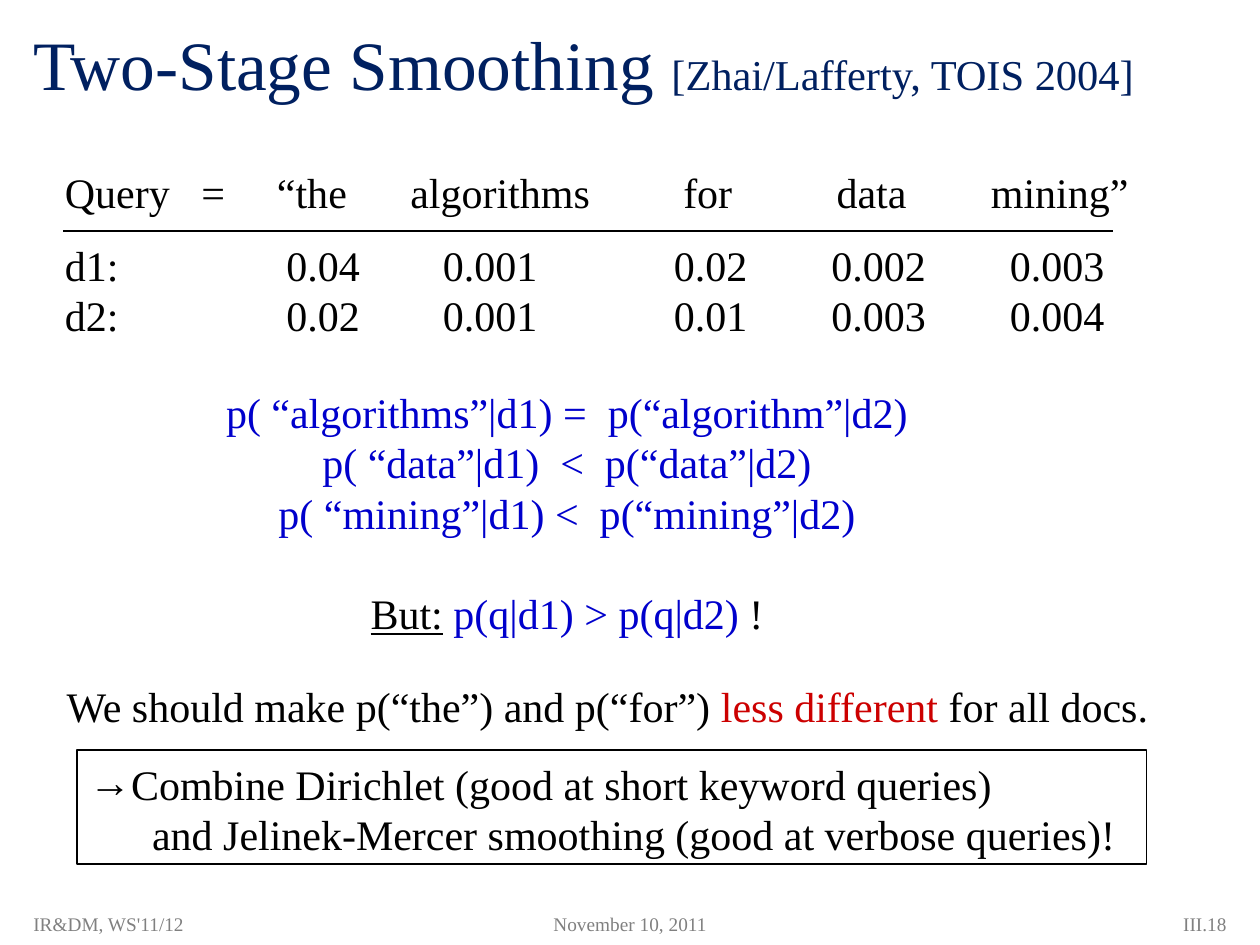
from lxml import etree
from pptx import Presentation
from pptx.dml.color import RGBColor
from pptx.enum.shapes import MSO_CONNECTOR, MSO_SHAPE
from pptx.enum.text import MSO_ANCHOR, PP_ALIGN
from pptx.oxml.ns import qn
from pptx.util import Inches, Pt

LEFT, CENTER, RIGHT = PP_ALIGN.LEFT, PP_ALIGN.CENTER, PP_ALIGN.RIGHT
TOP, MIDDLE = MSO_ANCHOR.TOP, MSO_ANCHOR.MIDDLE
STRAIGHT, RECTANGLE = MSO_CONNECTOR.STRAIGHT, MSO_SHAPE.RECTANGLE

FONT = "Times New Roman"
NAVY, BLACK, BLUE, RED, GRAY = "002060", "000000", "0000CC", "CC0000", "808080"
BODY_SIZE, LINE_PITCH = 24, 28.7
COLUMNS, ROWS = 120, 90


def grid(cells):
    return Inches(cells / 12)


def color(hex_text):
    return RGBColor.from_string(hex_text)


def prepare(frame, anchor=TOP, top_inset=0.07):
    frame.word_wrap = True
    frame.vertical_anchor = anchor
    frame.margin_left = frame.margin_right = Inches(0.1)
    frame.margin_top, frame.margin_bottom = Inches(top_inset), Inches(0.05)
    return frame


def add_frame(slide, box, **layout):
    return prepare(slide.shapes.add_textbox(*map(grid, box)).text_frame, **layout)


def add_run(paragraph, words, ink=BLACK, size=BODY_SIZE, underline=None):
    run = paragraph.add_run()
    run.text = words
    run.font.name = FONT
    run.font.size = Pt(size)
    run.font.underline = underline
    run.font.color.rgb = color(ink)


def body_lines(frame, count, align=LEFT):
    lines = [frame.paragraphs[0]] + [frame.add_paragraph() for _ in range(count - 1)]
    for line in lines:
        line.alignment = align
        line.line_spacing = Pt(LINE_PITCH)
    return lines


def set_tabs(paragraph, stops):
    tabs = etree.SubElement(paragraph._p.get_or_add_pPr(), qn("a:tabLst"))
    for stop in stops:
        etree.SubElement(tabs, qn("a:tab"), pos=str(grid(stop)), algn="l")


def indent(paragraph, margin, bullet=None):
    properties = paragraph._p.get_or_add_pPr()
    properties.set("marL", str(grid(margin)))
    properties.set("indent", str(-grid(margin) if bullet else 0))
    if bullet:
        etree.SubElement(properties, qn("a:buFont"), typeface=FONT)
        etree.SubElement(properties, qn("a:buChar"), char=bullet)


def add_title(slide, box):
    title = add_frame(slide, box, anchor=MIDDLE, top_inset=0.13).paragraphs[0]
    add_run(title, "Two-Stage Smoothing ", NAVY, 39.6)
    add_run(title, "[Zhai/Lafferty, TOIS 2004]", NAVY, 24.3)


def add_query_scores(slide, box):
    left, top, width, height = box
    rule_top = top + 7
    terms = ["Query", "=", "“the", "algorithms", "for", "data", "mining”"]
    scores = [
        ["d1:", "0.04", "0.001", "0.02", "0.002", "0.003"],
        ["d2:", "0.02", "0.001", "0.01", "0.003", "0.004"],
    ]
    query_frame = add_frame(slide, (left, top, width, 6))
    score_frame = add_frame(slide, (left, rule_top, width, height - 7))
    groups = [
        (query_frame, [terms], (13, 20.2, 32.9, 58.9, 73.5, 88.2)),
        (score_frame, scores, (21.1, 36, 58, 73, 90)),
    ]
    for frame, rows, stops in groups:
        for line, row in zip(body_lines(frame, len(rows)), rows):
            set_tabs(line, stops)
            add_run(line, "\t".join(row))

    rule = slide.shapes.add_connector(
        STRAIGHT, *map(grid, (left + 1, rule_top, left + 101, rule_top)))
    rule.line.color.rgb = color(BLACK)
    rule.line.width = Pt(1)
    etree.SubElement(rule._element.spPr, qn("a:effectLst"))


def add_comparisons(slide, box):
    comparisons = [
        "p( “algorithms”|d1) =  p(“algorithm”|d2)",
        "p( “data”|d1)  <  p(“data”|d2)",
        "p( “mining”|d1) <  p(“mining”|d2)",
    ]
    *lines, verdict = body_lines(add_frame(slide, box), len(comparisons) + 1, CENTER)
    for line, comparison in zip(lines, comparisons):
        add_run(line, comparison, BLUE)
    verdict.space_before = Pt(LINE_PITCH)
    add_run(verdict, "But:", underline=True)
    add_run(verdict, " ")
    add_run(verdict, "p(q|d1) > p(q|d2) ", BLUE)
    add_run(verdict, "!")


def add_advice(slide, box):
    advice = body_lines(add_frame(slide, box), 1, CENTER)[0]
    add_run(advice, "We should make p(“the”) and p(“for”) ")
    add_run(advice, "less different", RED)
    add_run(advice, " for all docs.")


def add_conclusion(slide, box):
    panel = slide.shapes.add_shape(RECTANGLE, *map(grid, box))
    panel.shadow.inherit = False
    panel.fill.background()
    panel.line.color.rgb = color(BLACK)
    panel.line.width = Pt(1)
    first, second = body_lines(prepare(panel.text_frame), 2)
    indent(first, 4, "→")
    add_run(first, "Combine Dirichlet (good at short keyword queries)")
    indent(second, 6)
    add_run(second, "and Jelinek-Mercer smoothing (good at verbose queries)!")


def add_footer(slide, box):
    left, top, width, height = box
    notes = [
        ("IR&DM, WS'11/12", left, 36, LEFT),
        ("November 10, 2011", left + (width - 28) / 2, 28, CENTER),
        ("III.18", left + width - 26, 26, RIGHT),
    ]
    for words, note_left, note_width, align in notes:
        frame = add_frame(slide, (note_left, top, note_width, height),
                          anchor=MIDDLE, top_inset=0.05)
        frame.paragraphs[0].alignment = align
        add_run(frame.paragraphs[0], words, GRAY, 11)


def main():
    deck = Presentation()
    deck.slide_width, deck.slide_height = grid(COLUMNS), grid(ROWS)
    slide = deck.slides.add_slide(deck.slide_layouts[6])
    add_title(slide, (2, 1, 116, 9))
    add_query_scores(slide, (5, 15, 109, 22.7))
    add_comparisons(slide, (11, 36, 86, 25.4))
    add_advice(slide, (4.7, 64, 106.3, 6))
    add_conclusion(slide, (7.3, 71.4, 101.9, 10.9))
    add_footer(slide, (2, 86, 116, 4))
    deck.save("out.pptx")


if __name__ == "__main__":
    main()
